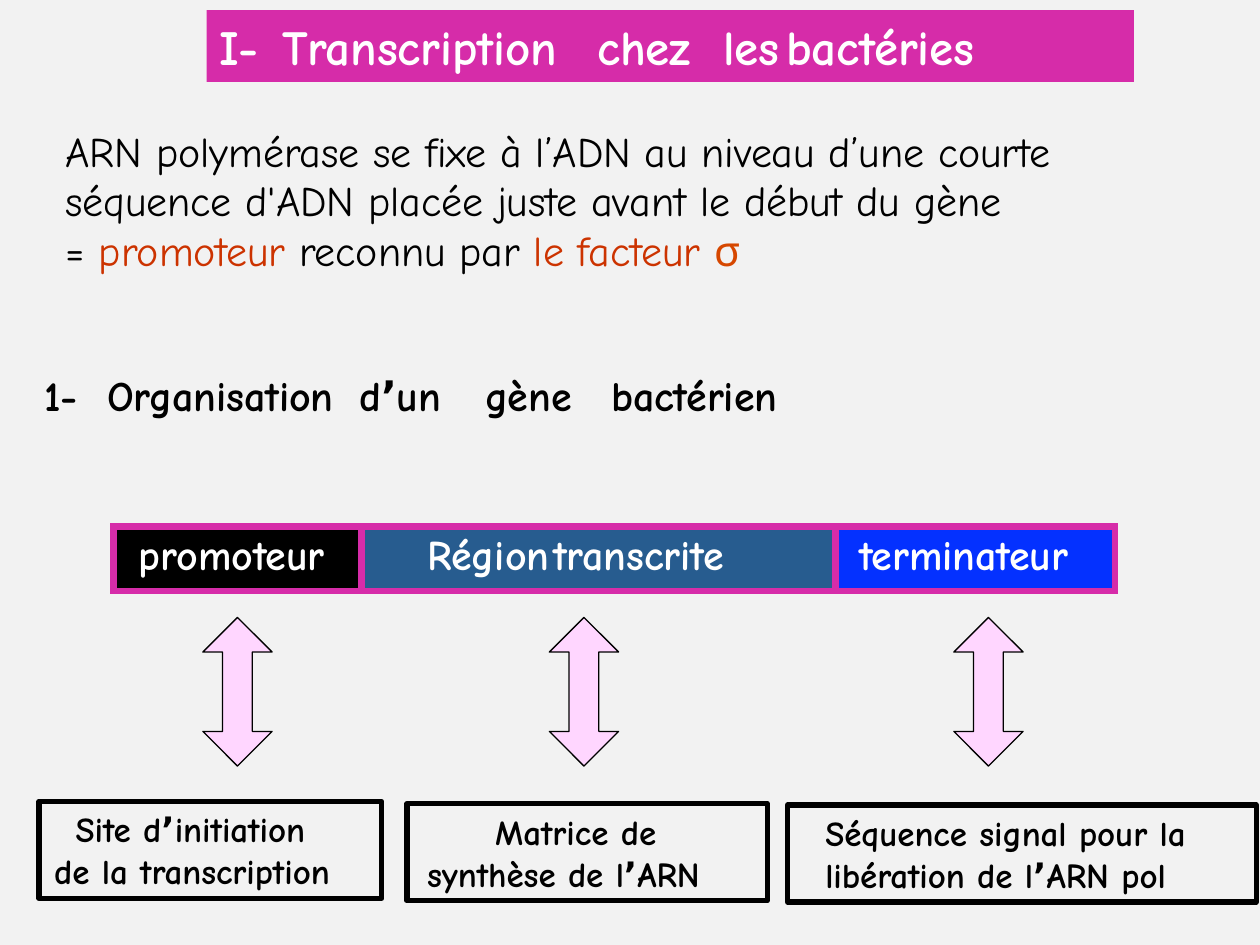
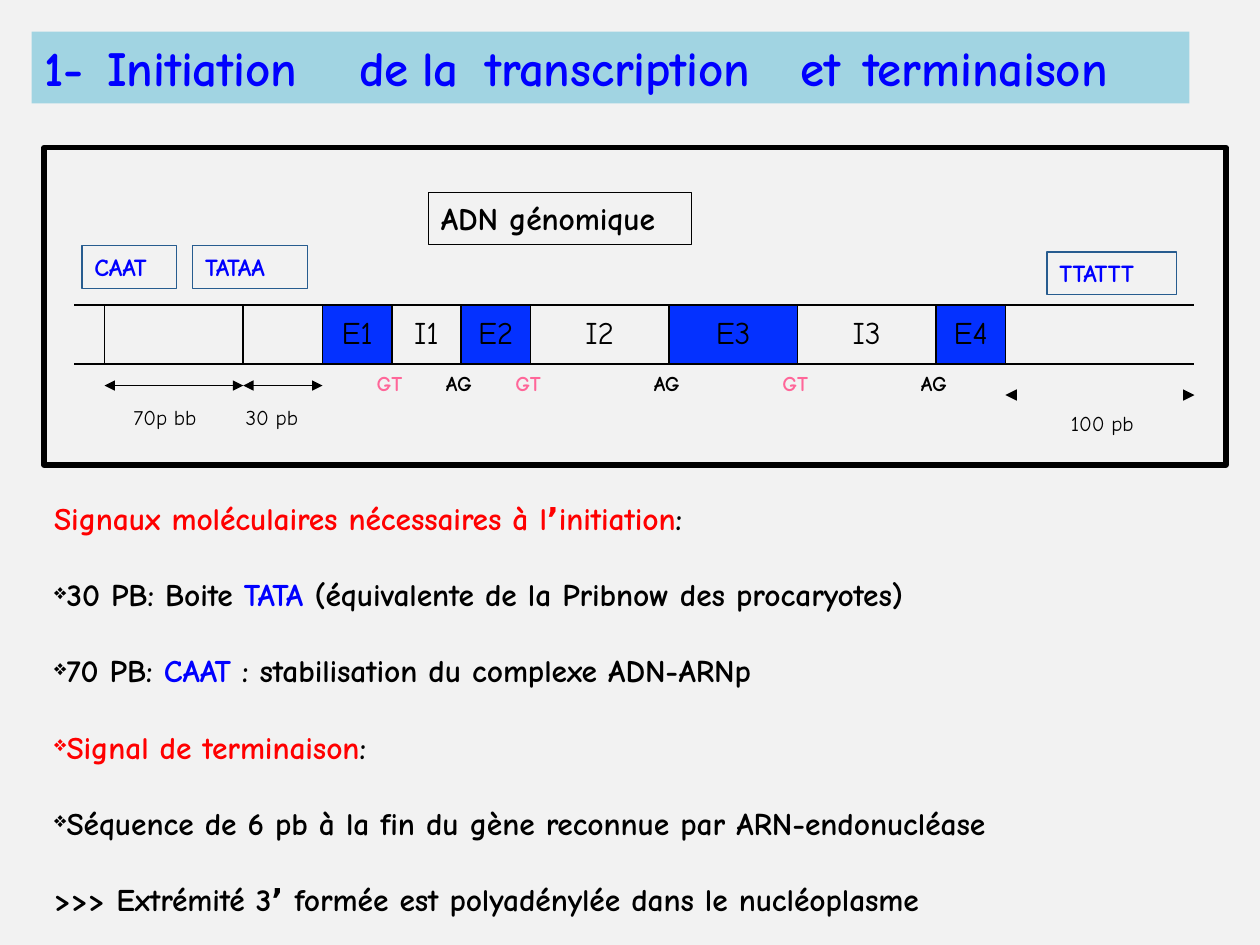
from collections import namedtuple
from itertools import accumulate, groupby

from lxml.etree import SubElement
from pptx import Presentation
from pptx.dml.color import RGBColor
from pptx.enum.shapes import MSO_CONNECTOR, MSO_SHAPE
from pptx.enum.text import MSO_ANCHOR, MSO_AUTO_SIZE, PP_ALIGN
from pptx.oxml.ns import qn
from pptx.util import Inches, Pt

COLS, ROWS = 100, 75  # slide grid, each cell a tenth of an inch
UNIT = Inches(0.1)

PAPER, BLACK, WHITE = "F2F2F2", "000000", "FFFFFF"
MAGENTA, SKY, STEEL, COBALT = "D62CA9", "A1D4E2", "275C8F", "0431FF"
LILAC, RUST, ORANGE = "FFD6FF", "CC3300", "D64700"
BLUE, RED, PINK = "0000FF", "FF0000", "FF6699"

FONT = "Comic Neue"
SYMBOLS = {"ʼ": "DejaVu Sans", "σ": "Cabin"}


class Box(namedtuple("Box", "x y w h")):
    def inner(self, x, y, w, h):
        """Box placed in grid units from this box's top left corner."""
        return Box(self.x + x, self.y + y, w, h)

    def emu(self):
        return [round(n * UNIT) for n in self]


def color(code):
    return RGBColor.from_string(code)


def paint(fill, code):
    if code:
        fill.solid()
        fill.fore_color.rgb = color(code)
    else:
        fill.background()


def apply(thing, **values):
    for name, value in values.items():
        setattr(thing, name, value)


def add_runs(para, text, code, size, bold):
    """Adds text as runs, changing font where a symbol needs it."""
    for n, line in enumerate(text.split("\n")):
        if n:
            para.add_line_break()
        for font, chars in groupby(line, lambda c: SYMBOLS.get(c, FONT)):
            run = para.add_run()
            run.text = "".join(chars)
            apply(run.font, name=font, size=Pt(size), bold=bold)
            run.font.color.rgb = color(code)
            run._r.get_or_add_rPr().set("spc", "-5")


def add_para(para, runs, code=BLACK, size=18, bold=True, indent=(0, 0),
             tabs=(), bullet=None, **form):
    """Fills a paragraph; runs is a string or a list of (text, colour)."""
    apply(para, **form)
    props = para._p.get_or_add_pPr()
    for name, length in zip(("marL", "indent"), indent):
        props.set(name, str(Inches(length)))
    if bullet:
        SubElement(props, qn("a:buSzPct")).set("val", "69000")
        SubElement(props, qn("a:buChar")).set("char", bullet)
    if tabs:
        stops = SubElement(props, qn("a:tabLst"))
        for stop in tabs:
            tab = SubElement(stops, qn("a:tab"))
            tab.set("pos", str(Inches(stop)))
            tab.set("algn", "l")
    for text, tone in [(runs, code)] if isinstance(runs, str) else runs:
        add_runs(para, text, tone, size, bold)


def set_frame(frame, left=0.0, top=0.05):
    apply(frame, word_wrap=True, auto_size=MSO_AUTO_SIZE.NONE,
          vertical_anchor=MSO_ANCHOR.TOP, margin_left=Inches(left),
          margin_top=Inches(top), margin_right=0, margin_bottom=0)
    return frame


def add_text(slide, box, runs, left=0.01, top=0.01, **form):
    frame = set_frame(slide.shapes.add_textbox(*box.emu()).text_frame, left, top)
    add_para(frame.paragraphs[0], runs, **form)
    return frame


def add_form(slide, kind, box, fill=None, line=None, width=0.75):
    shape = slide.shapes.add_shape(kind, *box.emu())
    shape.shadow.inherit = False
    paint(shape.fill, fill)
    paint(shape.line.fill, line)
    if line:
        shape.line.width = Pt(width)
    return shape


def add_label(slide, box, runs, line, width=0.75, left=0.1, **form):
    shape = add_form(slide, MSO_SHAPE.RECTANGLE, box, None, line, width)
    frame = set_frame(shape.text_frame, left)
    add_para(frame.paragraphs[0], runs, alignment=PP_ALIGN.LEFT, **form)


def add_title(slide, box, text, fill, code, tabs):
    title = slide.shapes.title
    for name, value in zip(("left", "top", "width", "height"), box.emu()):
        setattr(title, name, value)
    paint(title.fill, fill)
    para = set_frame(title.text_frame, 0.1).paragraphs[0]
    add_para(para, text, code, 28, tabs=tabs, alignment=PP_ALIGN.LEFT)


def add_strip(slide, box, widths):
    """One-row table without a banded style."""
    table = slide.shapes.add_table(1, len(widths), *box.emu()).table
    apply(table, first_row=False, horz_banding=False)
    table.rows[0].height = round(box.h * UNIT)
    for column, width in zip(table.columns, widths):
        column.width = round(width * UNIT)
    return table


def format_cell(cell, fill, code, width, sides="LRTB", left=0.0, top=0.05):
    apply(cell, margin_left=Inches(left), margin_right=0,
          margin_top=Inches(top), margin_bottom=0)
    props = cell._tc.get_or_add_tcPr()
    for side in "LRTB":
        line = SubElement(props, qn(f"a:ln{side}"))
        if side in sides:
            line.set("w", str(Pt(width)))
            tone = SubElement(line, qn("a:solidFill"))
            SubElement(tone, qn("a:srgbClr")).set("val", code)
        else:
            SubElement(line, qn("a:noFill"))
    paint(cell.fill, fill)


def add_span(slide, x, end, y):
    """Line with an arrowhead at both ends."""
    ends = [round(n * UNIT) for n in (x, y, end, y)]
    link = slide.shapes.add_connector(MSO_CONNECTOR.STRAIGHT, *ends)
    link.line.width = Pt(1)
    paint(link.line.fill, BLACK)
    line = link.line._get_or_add_ln()
    for name in ("headEnd", "tailEnd"):
        SubElement(line, qn(f"a:{name}")).set("type", "triangle")
    SubElement(link._element.spPr, qn("a:effectLst"))


def add_intro(slide, box):
    text = ("ARN polymérase se fixe à l’ADN au niveau d’une courte "
            "séquence d'ADN placée juste avant le début du gène")
    form = dict(size=24, indent=(0.18, 0))
    frame = add_text(slide, box, text, left=0, top=0.04, bold=False,
                     line_spacing=Pt(28), **form)
    factor = [("= ", BLACK), ("promoteur ", RUST), ("reconnu par ", BLACK),
              ("le facteur ", RUST), ("σ", ORANGE)]
    add_para(frame.add_paragraph(), factor, bold=False,
             line_spacing=Pt(28.2), **form)
    add_para(frame.add_paragraph(), "1-\tOrganisation\tdʼun\tgène\tbactérien",
             size=24, indent=(0.01, 0), tabs=(0.56, 2.71, 3.57, 4.44),
             space_before=Pt(54))


def add_gene(slide, box):
    """Gene strip, with an arrow from each region to its role."""
    regions = [("promoteur", 19.7, BLACK, 0.2),
               ("Région\ttranscrite", 37.6, STEEL, 0.52),
               ("terminateur", 22.2, COBALT, 0.19)]
    table = add_strip(slide, box.inner(5.9, 0, 79.5, 5.1), [r[1] for r in regions])
    for cell, (text, _, fill, left) in zip(table.rows[0].cells, regions):
        format_cell(cell, fill, MAGENTA, 4.25, left=left)
        add_para(cell.text_frame.paragraphs[0], text, WHITE, 24, tabs=(1.68,))

    roles = [("Site dʼinitiation\nde la transcription", 0, 21.8, 27.2, 13, (0.12, 0.17)),
             ("Matrice de\nsynthèse de lʼARN", 29.2, 22, 28.6, 40.5, (0.16, 0.54)),
             ("Séquence signal pour la\nlibération de lʼARN pol", 59.4, 22.1, 37.2, 72.6,
              (0.3, 0))]
    for text, x, y, wide, arrow, indent in roles:
        shape = add_form(slide, MSO_SHAPE.UP_DOWN_ARROW,
                         box.inner(arrow, 7.2, 5.5, 11.8), LILAC, BLACK)
        shape.adjustments[0], shape.adjustments[1] = 0.5, 0.43
        add_label(slide, box.inner(x, y, wide, 7.7), text, BLACK, 3,
                  left=0, size=20, indent=indent)


def add_dna(slide, box):
    """Framed map of the gene with exons, introns and signals."""
    add_form(slide, MSO_SHAPE.RECTANGLE, box, None, BLACK, 3)
    add_label(slide, box.inner(30.5, 3.6, 20.9, 4.1), "ADN génomique", BLACK)
    for text, x, y, wide in [("CAAT", 3, 7.8, 7.5), ("TATAA", 11.8, 7.8, 9.1),
                             ("TTATTT", 79.6, 8.3, 10.3)]:
        add_label(slide, box.inner(x, y, wide, 3.4), text, STEEL, code=BLUE, size=14)

    zones = [("", 2.4), ("", 11), ("", 6.3), ("E1", 5.5), ("I1", 5.5), ("E2", 5.5),
             ("I2", 11), ("E3", 10.2), ("I3", 11), ("E4", 5.5), ("", 15)]
    widths = [wide for _, wide in zones]
    strip = box.inner(2.4, 12.5, sum(widths), 4.7)
    cells = list(add_strip(slide, strip, widths).rows[0].cells)
    edges = [strip.x + n for n in accumulate(widths, initial=0)]
    for n, (cell, (text, _)) in enumerate(zip(cells, zones)):
        sides = {0: "RTB", len(zones) - 1: "LTB"}.get(n, "LRTB")
        fill = COBALT if text.startswith("E") else None
        format_cell(cell, fill, BLACK, 1, sides, top=0.09)
        if text:
            add_para(cell.text_frame.paragraphs[0], text, bold=False,
                     alignment=PP_ALIGN.CENTER)
        if text.startswith("I"):
            for edge, site, code in [(n, "GT", PINK), (n + 1, "AG", BLACK)]:
                add_text(slide, Box(edges[edge] - 1.3, box.y + 17.6, 2.6, 2.3),
                         site, code=code, size=12)

    for n in (1, 2):
        add_span(slide, edges[n], edges[n + 1], box.y + 18.9)
    for x, turn in [(edges[10], -90), (edges[11] - 0.9, 90)]:
        tip = add_form(slide, MSO_SHAPE.ISOSCELES_TRIANGLE,
                       Box(x, box.y + 19.2, 0.9, 0.9), BLACK)
        tip.rotation = turn
    for text, x, y, wide in [("70p bb", 7, 20.3, 6), ("30 pb", 15.9, 20.3, 5),
                             ("100 pb", 81.4, 20.8, 6)]:
        add_text(slide, box.inner(x, y, wide, 2.3), text, size=12, bold=False)


def add_signals(slide, box):
    head = [("Signaux moléculaires nécessaires à lʼinitiation", RED), (":", BLACK)]
    items = [
        [("30 PB: Boite ", BLACK), ("TATA ", BLUE),
         ("(équivalente de la Pribnow des procaryotes)", BLACK)],
        [("70 PB: ", BLACK), ("CAAT ", BLUE),
         (": stabilisation du complexe ADN-ARNp", BLACK)],
        [("Signal de terminaison", RED), (":", BLACK)],
        "Séquence de 6 pb à la fin du gène reconnue par ARN-endonucléase"]
    frame = add_text(slide, box, head)
    for item in items:
        add_para(frame.add_paragraph(), item, bullet="❖", tabs=(0.28,),
                 space_before=Pt(22))
    add_para(frame.add_paragraph(),
             ">>> Extrémité 3ʼ formée est polyadénylée dans le nucléoplasme",
             space_before=Pt(22))


def main():
    deck = Presentation()
    apply(deck, slide_width=COLS * UNIT, slide_height=ROWS * UNIT)
    paint(deck.slide_master.background.fill, PAPER)
    layout = deck.slide_layouts[5]

    gene = deck.slides.add_slide(layout)
    add_title(gene, Box(16.4, 0.8, 73.6, 5.7), "I-\tTranscription\tchez\tles\tbactéries",
              MAGENTA, WHITE, (0.63, 3.27, 4.29, 4.97))
    add_intro(gene, Box(3.4, 9.7, 87.1, 23.2))
    add_gene(gene, Box(3.1, 41.8, 96.6, 29.8))

    start = deck.slides.add_slide(layout)
    add_title(start, Box(2.5, 2.5, 91.9, 5.7),
              "1-\tInitiation\tde\tla\ttranscription\tet\tterminaison",
              SKY, BLUE, (0.74, 2.64, 3.26, 3.75, 6.3, 6.87))
    add_dna(start, Box(3.5, 11.7, 93.8, 25.2))
    add_signals(start, Box(4.2, 39.5, 90.8, 33.3))

    deck.save("out.pptx")


if __name__ == "__main__":
    main()
